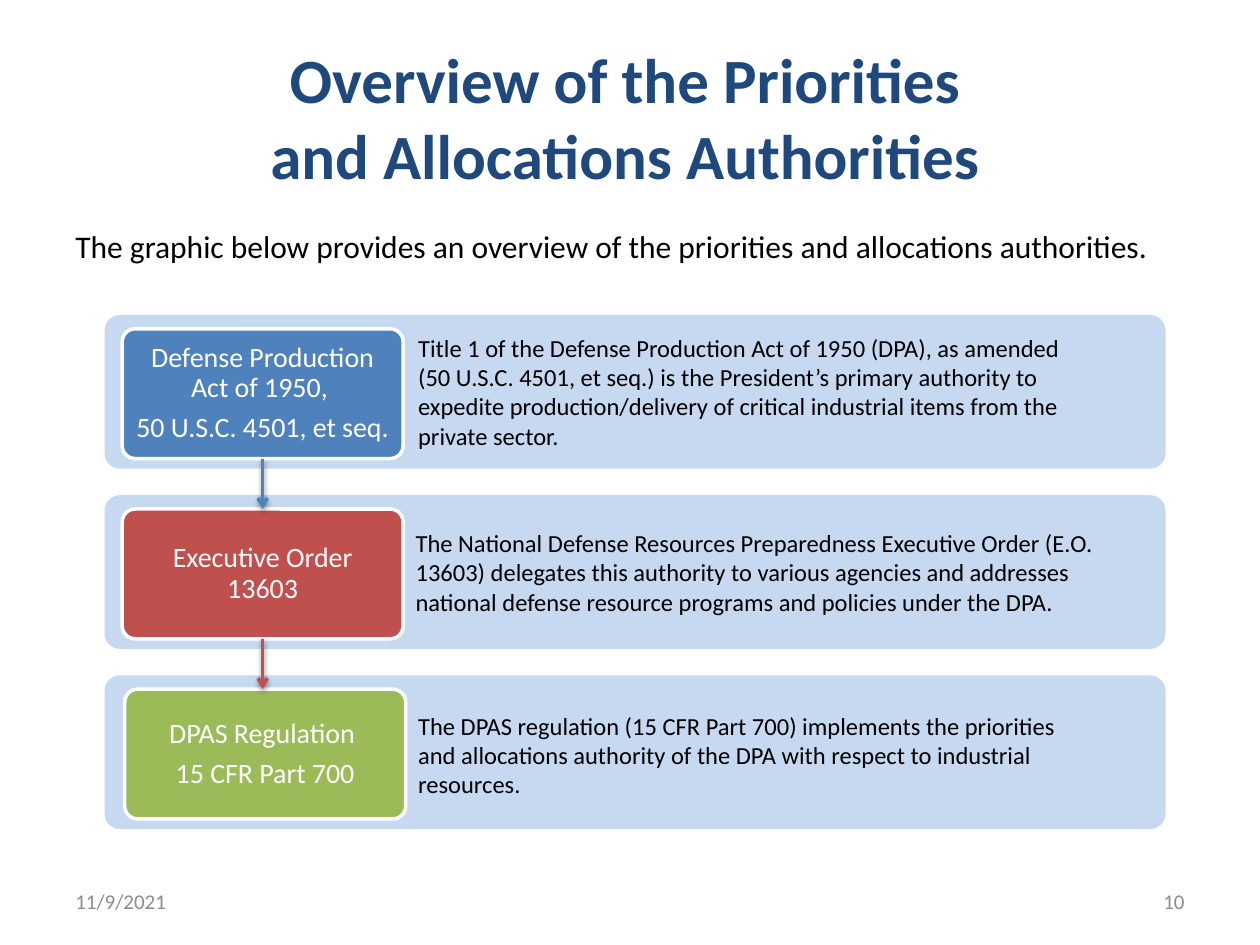
"""Build a slide that outlines the priorities and allocations authorities."""
from lxml.etree import SubElement
from pptx import Presentation
from pptx.dml.color import RGBColor
from pptx.enum.shapes import MSO_CONNECTOR, MSO_SHAPE
from pptx.enum.text import MSO_ANCHOR, PP_ALIGN
from pptx.oxml.ns import qn
from pptx.util import Inches, Pt

FONT = "Calibri"
WHITE, BLACK, GRAY, NAVY, PALE_BLUE = "FFFFFF", "000000", "8C8C8C", "1F497D", "C6D9F1"
TITLE = "Overview of the Priorities and Allocations Authorities"
INTRODUCTION = "The graphic below provides an overview of the priorities and allocations authorities."
DATE, NUMBER = "11/9/2021", "10"
AUTHORITIES = [
    {
        "label": ["Defense Production Act of 1950, ", "50 U.S.C. 4501, et seq."],
        "color": "4F81BD",
        "left": 0.97,
        "note": "Title 1 of the Defense Production Act of 1950 (DPA), as amended (50 U.S.C. 4501, "
                "et seq.) is the President’s primary authority to expedite production/delivery of "
                "critical industrial items from the private sector.",
        "note_box": (3.22, 2.59, 5.59, 1.04),
    },
    {
        "label": ["Executive Order 13603"],
        "color": "C0504D",
        "left": 0.97,
        "note": "The National Defense Resources Preparedness Executive Order (E.O. 13603) delegates "
                "this authority to various agencies and addresses national defense resource "
                "programs and policies under the DPA.",
        "note_box": (3.2, 4.14, 5.59, 0.81),
    },
    {
        "label": ["DPAS Regulation ", "15 CFR Part 700"],
        "color": "9BBB59",
        "left": 0.99,
        "note": "The DPAS regulation (15 CFR Part 700) implements the priorities and allocations "
                "authority of the DPA with respect to industrial resources.",
        "note_box": (3.22, 5.59, 5.59, 0.81),
    },
]
BAND_LEFT, BAND_TOP, BAND_WIDTH, BAND_HEIGHT = 0.83, 2.5, 8.42, 1.22
ROW_STEP = 1.43
LABEL_TOP, LABEL_WIDTH, LABEL_HEIGHT = 2.61, 2.23, 1.03


def rgb(color):
    """Turn a hex string into a colour."""
    return RGBColor.from_string(color)


def add_run(paragraph, text, size, color, bold=False):
    """Add one formatted run."""
    run = paragraph.add_run()
    run.text = text
    run.font.name = FONT
    run.font.size = Pt(size)
    run.font.bold = bold
    run.font.color.rgb = rgb(color)


def add_text(slide, box, text, size, color, align=PP_ALIGN.LEFT, anchor=MSO_ANCHOR.TOP, bold=False):
    """Add a wrapped text box with one paragraph."""
    frame = slide.shapes.add_textbox(*map(Inches, box)).text_frame
    frame.word_wrap = True
    frame.vertical_anchor = anchor
    paragraph = frame.paragraphs[0]
    paragraph.alignment = align
    add_run(paragraph, text, size, color, bold)


def add_panel(slide, box, color):
    """Add a plain rounded rectangle."""
    shape = slide.shapes.add_shape(MSO_SHAPE.ROUNDED_RECTANGLE, *map(Inches, box))
    shape.adjustments[0] = 0.1
    shape.shadow.inherit = False
    shape.fill.solid()
    shape.fill.fore_color.rgb = rgb(color)
    shape.line.fill.background()
    return shape


def add_label(slide, box, lines, color):
    """Add a coloured box with a white outline and centred lines."""
    shape = add_panel(slide, box, color)
    shape.line.color.rgb = rgb(WHITE)
    shape.line.width = Pt(2)
    frame = shape.text_frame
    frame.word_wrap = True
    frame.vertical_anchor = MSO_ANCHOR.MIDDLE
    frame.margin_left = frame.margin_right = Inches(0.07)
    frame.margin_top = frame.margin_bottom = Inches(0.07)
    for index, line in enumerate(lines):
        paragraph = frame.add_paragraph() if index else frame.paragraphs[0]
        paragraph.alignment = PP_ALIGN.CENTER
        paragraph.line_spacing = 0.9
        paragraph.space_after = Pt(5.6)
        add_run(paragraph, line, 16, WHITE)
    return shape


def add_arrow(slide, upper, lower, color):
    """Draw a shadowed arrow straight down from one label to the next."""
    center = upper.left + upper.width // 2
    arrow = slide.shapes.add_connector(
        MSO_CONNECTOR.STRAIGHT, center, upper.top + upper.height, center, lower.top)
    arrow.begin_connect(upper, 2)
    if lower.left == upper.left:
        arrow.end_connect(lower, 0)
    arrow.line.color.rgb = rgb(color)
    arrow.line.width = Pt(2)
    SubElement(arrow.line._get_or_add_ln(), qn("a:tailEnd"), type="arrow")
    effects = SubElement(arrow._element.spPr, qn("a:effectLst"))
    shadow = SubElement(effects, qn("a:outerShdw"), blurRad=str(Pt(3.1)), dist=str(Pt(1.6)),
                        dir="5400000", rotWithShape="0")
    shade = SubElement(shadow, qn("a:srgbClr"), val=BLACK)
    SubElement(shade, qn("a:alpha"), val="38000")


def main():
    """Build and save the slide."""
    presentation = Presentation()
    presentation.slide_width, presentation.slide_height = Inches(10), Inches(7.5)
    slide = presentation.slides.add_slide(presentation.slide_layouts[6])
    middle = MSO_ANCHOR.MIDDLE
    add_text(slide, (2, 0.3, 5.92, 1.25), TITLE, 36, NAVY, PP_ALIGN.CENTER, middle, True)
    add_text(slide, (0.5, 1.75, 9, 4.95), INTRODUCTION, 18, BLACK)
    add_text(slide, (0.5, 6.95, 2.33, 0.4), DATE, 12, GRAY, anchor=middle)
    add_text(slide, (7.17, 6.95, 2.33, 0.4), NUMBER, 12, GRAY, PP_ALIGN.RIGHT, middle)

    labels = []
    for row, authority in enumerate(AUTHORITIES):
        offset = row * ROW_STEP
        add_panel(slide, (BAND_LEFT, BAND_TOP + offset, BAND_WIDTH, BAND_HEIGHT), PALE_BLUE)
        label_box = (authority["left"], LABEL_TOP + offset, LABEL_WIDTH, LABEL_HEIGHT)
        labels.append(add_label(slide, label_box, authority["label"], authority["color"]))
        add_text(slide, authority["note_box"], authority["note"], 14, BLACK)
    for upper, lower, authority in zip(labels, labels[1:], AUTHORITIES):
        add_arrow(slide, upper, lower, authority["color"])
    presentation.save("out.pptx")


if __name__ == "__main__":
    main()
